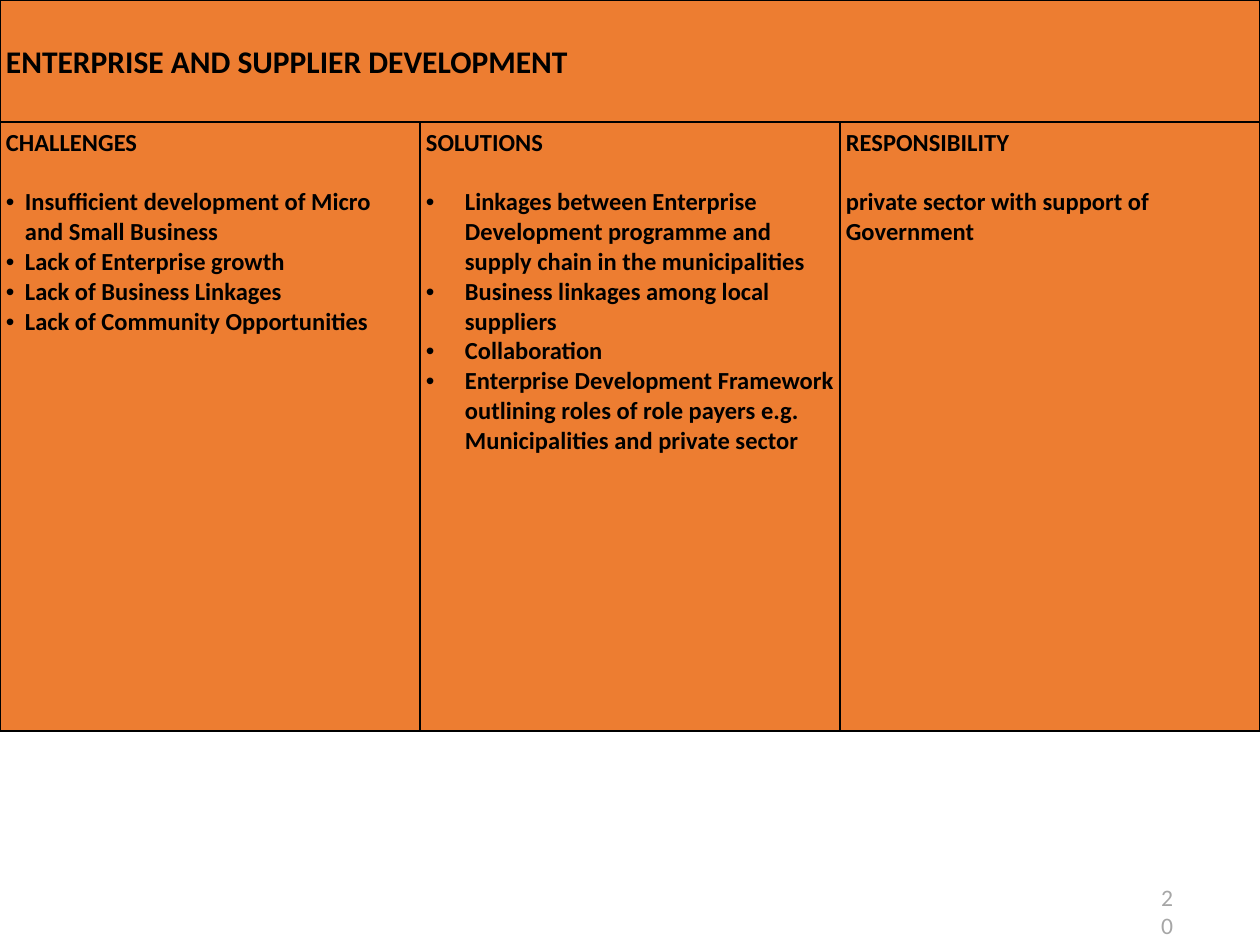
from dataclasses import dataclass

from lxml.etree import SubElement
from pptx import Presentation
from pptx.dml.color import RGBColor
from pptx.enum.text import PP_ALIGN
from pptx.oxml.ns import qn
from pptx.util import Emu, Pt

PX_PER_INCH = 126
FONT = "Calibri"
ORANGE, BLACK, GREY = "ED7D31", "000000", "A6A6A6"
COL_W, TITLE_H, BODY_H = 420, 122, 609
INSET = 6


@dataclass
class Column:
    heading: str
    items: list[str]
    indent: int = 0


COLUMNS = [
    Column("CHALLENGES", [
        "Insufficient development of Micro and Small Business",
        "Lack of Enterprise growth",
        "Lack of Business Linkages",
        "Lack of Community Opportunities",
    ], 19),
    Column("SOLUTIONS", [
        "Linkages between Enterprise Development programme and supply chain in the municipalities",
        "Business linkages among local suppliers",
        "Collaboration",
        "Enterprise Development Framework outlining roles of role payers "
        "e.g. Municipalities and private sector",
    ], 39),
    Column("RESPONSIBILITY", ["private sector with support of Government"]),
]


def px(n: int) -> Emu:
    return Emu(round(n * 914400 / PX_PER_INCH))


def rgb(colour: str) -> RGBColor:
    return RGBColor.from_string(colour)


def set_attrs(obj, values: dict) -> None:
    for name, value in values.items():
        setattr(obj, name, value)


def write(p, text: str, size: float, colour: str = BLACK, bold: bool = True) -> None:
    r = p.add_run()
    r.text = text
    set_attrs(r.font, {"name": FONT, "size": Pt(size), "bold": bold})
    r.font.color.rgb = rgb(colour)


def add_bullet(p, indent: int) -> None:
    pPr = p._p.get_or_add_pPr()
    pPr.set("marL", str(px(indent)))
    pPr.set("indent", str(-px(indent)))
    SubElement(pPr, qn("a:buFont"), typeface="Arial")
    SubElement(pPr, qn("a:buChar"), char="•")


def format_cell(cell, top: int = INSET) -> None:
    """Set the margins, black borders and orange fill."""
    set_attrs(cell, {"margin_left": px(INSET), "margin_right": px(INSET),
                     "margin_top": px(top), "margin_bottom": px(INSET)})
    tcPr = cell._tc.get_or_add_tcPr()
    for side in ("lnL", "lnR", "lnT", "lnB"):
        ln = SubElement(tcPr, qn(f"a:{side}"), w=str(Pt(1)))
        SubElement(SubElement(ln, qn("a:solidFill")), qn("a:srgbClr"), val=BLACK)
    cell.fill.solid()
    cell.fill.fore_color.rgb = rgb(ORANGE)


def fill_column(cell, column: Column) -> None:
    format_cell(cell)
    tf = cell.text_frame
    p = tf.paragraphs[0]
    p.space_after = Pt(17)
    write(p, column.heading, 14)
    for item in column.items:
        p = tf.add_paragraph()
        if column.indent:
            add_bullet(p, column.indent)
        write(p, item, 14)


def add_plan_table(s) -> None:
    table = s.shapes.add_table(2, len(COLUMNS), 0, 0, px(COL_W * len(COLUMNS)),
                               px(TITLE_H + BODY_H)).table
    set_attrs(table, {"first_row": False, "horz_banding": False})
    for row, height in zip(table.rows, (TITLE_H, BODY_H)):
        row.height = px(height)
    for i, column in enumerate(COLUMNS):
        table.columns[i].width = px(COL_W)
        format_cell(table.cell(0, i), top=44)
        fill_column(table.cell(1, i), column)
    title = table.cell(0, 0)
    title.merge(table.cell(0, len(COLUMNS) - 1))
    write(title.text_frame.paragraphs[0], "ENTERPRISE AND SUPPLIER DEVELOPMENT", 18)


def add_page_number(s, number: str) -> None:
    tf = s.shapes.add_textbox(px(1153), px(876), px(20), px(23)).text_frame
    set_attrs(tf, {"word_wrap": True, "margin_left": 0, "margin_right": 0,
                   "margin_top": px(7), "margin_bottom": 0})
    p = tf.paragraphs[0]
    p.alignment = PP_ALIGN.RIGHT
    write(p, number, 13.5, GREY, bold=False)


def main() -> None:
    prs = Presentation()
    set_attrs(prs, {"slide_width": px(1260), "slide_height": px(945)})
    s = prs.slides.add_slide(prs.slide_layouts[6])
    add_page_number(s, "20")
    add_plan_table(s)
    prs.save("out.pptx")


if __name__ == "__main__":
    main()
